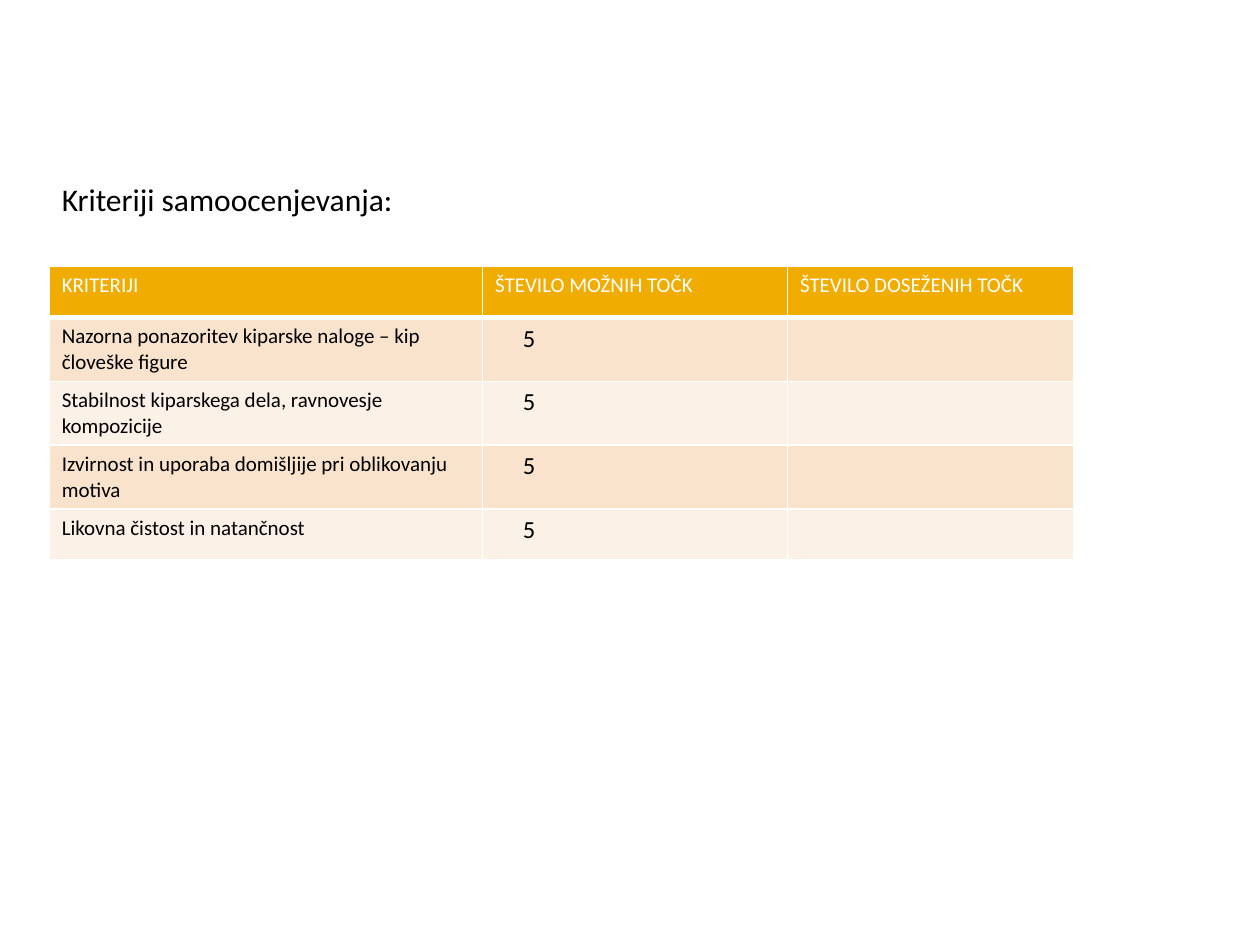
from lxml.etree import SubElement
from pptx import Presentation
from pptx.dml.color import RGBColor
from pptx.enum.text import MSO_ANCHOR, MSO_AUTO_SIZE, PP_ALIGN
from pptx.oxml.ns import qn
from pptx.util import Inches, Pt

HEADERS = ["KRITERIJI", "ŠTEVILO MOŽNIH TOČK", "ŠTEVILO DOSEŽENIH TOČK"]
CRITERIA = [
    "Nazorna ponazoritev kiparske naloge – kip človeške figure",
    "Stabilnost kiparskega dela, ravnovesje kompozicije",
    "Izvirnost in uporaba domišljije pri oblikovanju motiva",
    "Likovna čistost in natančnost",
]


def color(value):
    return RGBColor.from_string(value)


class SlideBuilder:
    FONT = "Calibri"
    BLACK = "000000"
    WHITE = "FFFFFF"
    HEADER = "F0AD00"
    BANDS = ["F9E3CC", "FCF1E7"]

    def __init__(self, prs):
        self.s = prs.slides.add_slide(prs.slide_layouts[5])

    def format(self, p, size, ink):
        p.font.name = self.FONT
        p.font.size = Pt(size)
        p.font.color.rgb = color(ink)
        p.alignment = PP_ALIGN.LEFT

    def title(self, text, left, top, width, height):
        sp = self.s.shapes.title
        sp.left, sp.top = Inches(left), Inches(top)
        sp.width, sp.height = Inches(width), Inches(height)
        tf = sp.text_frame
        tf.text = text
        tf.word_wrap = True
        tf.auto_size = MSO_AUTO_SIZE.NONE
        tf.vertical_anchor = MSO_ANCHOR.BOTTOM
        self.format(tf.paragraphs[0], 18, self.BLACK)

    def borders(self, cell, bottom):
        tcPr = cell._tc.get_or_add_tcPr()
        widths = {"a:lnL": 1, "a:lnR": 1, "a:lnT": 1, "a:lnB": bottom}
        for tag, width in widths.items():
            ln = SubElement(tcPr, qn(tag), w=str(Pt(width)))
            fill = SubElement(ln, qn("a:solidFill"))
            SubElement(fill, qn("a:srgbClr"), val=self.WHITE)

    def cell(self, cell, text, size, ink, fill, bottom=1):
        self.borders(cell, bottom)
        cell.fill.solid()
        cell.fill.fore_color.rgb = color(fill)
        cell.text = text
        self.format(cell.text_frame.paragraphs[0], size, ink)

    def table(self, headers, rows, left, top, widths, heights):
        table = self.s.shapes.add_table(
            len(rows) + 1, len(headers), Inches(left), Inches(top),
            Inches(sum(widths)), Inches(sum(heights))).table
        for column, width in zip(table.columns, widths):
            column.width = Inches(width)
        for row, height in zip(table.rows, heights):
            row.height = Inches(height)
        for c, text in enumerate(headers):
            self.cell(table.cell(0, c), text, 12, self.WHITE, self.HEADER, 3)
        for r, values in enumerate(rows):
            for c, text in enumerate(values):
                cell = table.cell(r + 1, c)
                self.cell(cell, text, 14 if c == 1 else 12, self.BLACK,
                          self.BANDS[r % 2])
                if c == 1:
                    cell.margin_left = Inches(0.32)


def main():
    prs = Presentation()
    prs.slide_width, prs.slide_height = Inches(10), Inches(7.5)
    slide = SlideBuilder(prs)
    slide.title("Kriteriji samoocenjevanja:", 0.39, 0.47, 9.14, 1.31)
    slide.table(HEADERS, [[text, "5", ""] for text in CRITERIA], 0.39, 2.11,
                [3.44, 2.42, 2.27], [0.41, 0.5, 0.5, 0.5, 0.4])
    prs.save("out.pptx")


if __name__ == "__main__":
    main()
